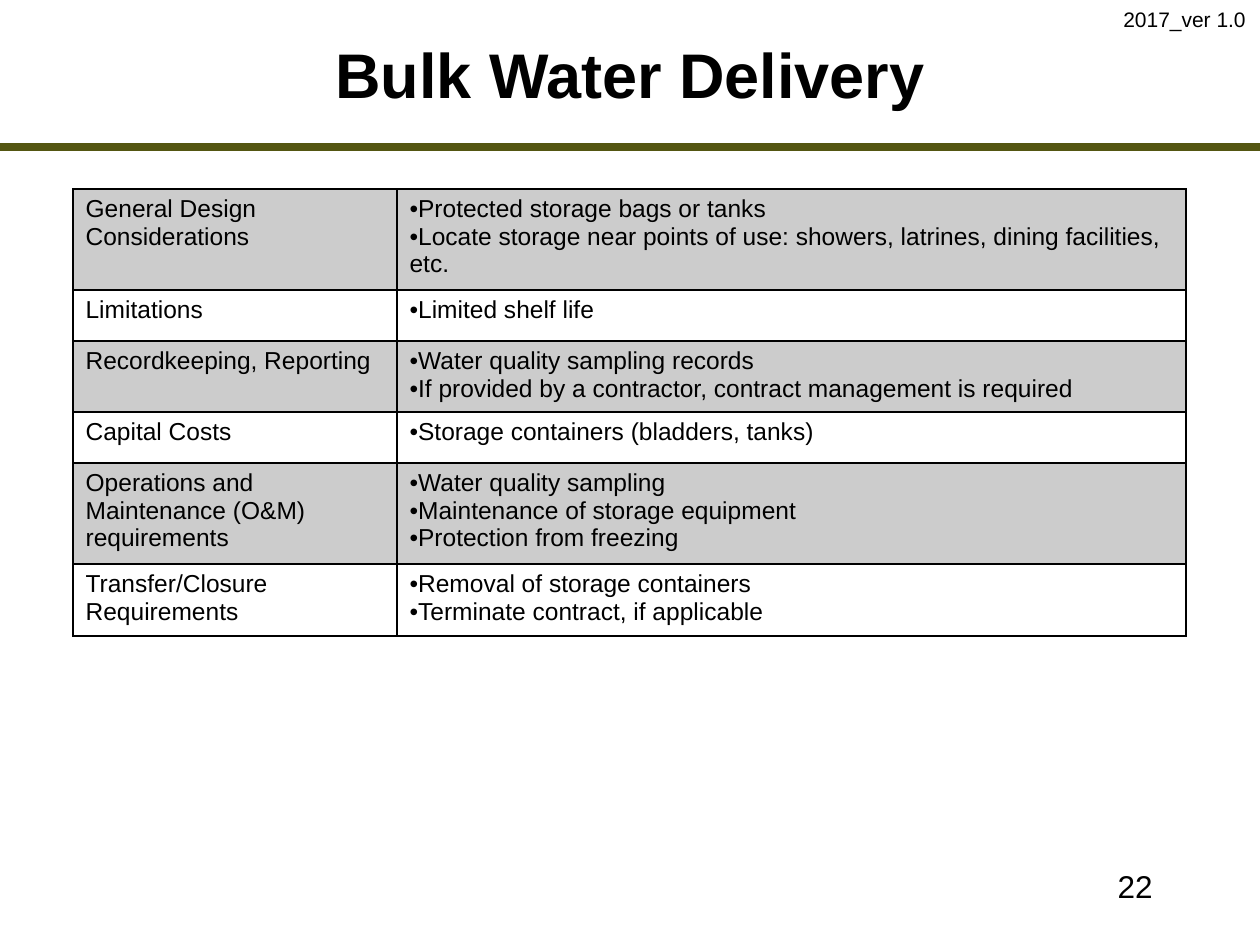
from lxml import etree
from pptx import Presentation
from pptx import util as u
from pptx.dml.color import RGBColor
from pptx.enum import shapes, text
from pptx.oxml.ns import qn

SCALE = 914400 / 126
BLACK, OLIVE = "000000", "545612"
FACE = "Arial"
ALIGN = text.PP_ALIGN

ROWS = [
    (101, "General Design Considerations",
     ["Protected storage bags or tanks",
      "Locate storage near points of use: showers, latrines, "
      "dining facilities, etc."]),
    (51, "Limitations", ["Limited shelf life"]),
    (71, "Recordkeeping, Reporting",
     ["Water quality sampling records",
      "If provided by a contractor, contract management is required"]),
    (51, "Capital Costs", ["Storage containers (bladders, tanks)"]),
    (101, "Operations and Maintenance (O&M) requirements",
     ["Water quality sampling", "Maintenance of storage equipment",
      "Protection from freezing"]),
    (72, "Transfer/Closure Requirements",
     ["Removal of storage containers", "Terminate contract, if applicable"]),
]


def px(n):
    return u.Emu(round(n * SCALE))


def color(code):
    return RGBColor.from_string(code)


def write(frame, lines, size=14, bold=False, align=ALIGN.LEFT, bullet=False):
    """Fill a text frame, one paragraph for each line."""
    for i, line in enumerate(lines):
        para = frame.add_paragraph() if i else frame.paragraphs[0]
        para.text = line
        para.alignment = align
        if bullet:
            props = para._p.get_or_add_pPr()
            props.set("marL", "0")
            props.set("indent", "0")
            etree.SubElement(props, qn("a:buFont"), typeface=FACE)
            etree.SubElement(props, qn("a:buChar"), char="•")
        font = para.font
        font.name, font.size, font.bold = FACE, u.Pt(size), bold
        font.color.rgb = color(BLACK)


def border(cell):
    props = cell._tc.get_or_add_tcPr()
    for side in ("lnL", "lnR", "lnT", "lnB"):
        line = etree.SubElement(props, qn("a:" + side), w=str(u.Pt(1)))
        fill = etree.SubElement(line, qn("a:solidFill"))
        etree.SubElement(fill, qn("a:srgbClr"), val=BLACK)


def shade(cell, dark):
    """Tint a dark cell with black at 20 percent; leave others clear."""
    if not dark:
        cell.fill.background()
        return
    cell.fill.solid()
    cell.fill.fore_color.rgb = color(BLACK)
    tone = cell._tc.tcPr.find(qn("a:solidFill")).find(qn("a:srgbClr"))
    etree.SubElement(tone, qn("a:alpha"), val="20000")


def header(slide, x, y, w, h):
    # Title
    title = slide.shapes.title
    title.left, title.top = px(x + 147), px(y + 21)
    title.width, title.height = px(w - 294), px(105)
    frame = title.text_frame
    frame.vertical_anchor = text.MSO_ANCHOR.MIDDLE
    write(frame, ["Bulk Water Delivery"], size=36, bold=True,
          align=ALIGN.CENTER)
    # Rule under the title
    rule = slide.shapes.add_connector(
        shapes.MSO_CONNECTOR.STRAIGHT, px(x), px(y + h), px(x + w), px(y + h))
    rule.line.color.rgb = color(OLIVE)
    rule.line.width = u.Pt(4.5)
    etree.SubElement(rule._element.spPr, qn("a:effectLst"))


def grid(slide, x, y, w, h):
    table = slide.shapes.add_table(
        len(ROWS), 2, px(x), px(y), px(w), px(h)).table
    table.first_row = table.horz_banding = False
    label = 324
    table.columns[0].width = px(label)
    table.columns[1].width = px(w - label)
    for i, (high, name, points) in enumerate(ROWS):
        table.rows[i].height = px(high)
        for j, lines in enumerate(([name], points)):
            cell = table.cell(i, j)
            write(cell.text_frame, lines, bullet=j == 1)
            border(cell)
            shade(cell, i % 2 == 0)


def note(slide, x, y, w, h, line, wrap=True, **style):
    frame = slide.shapes.add_textbox(px(x), px(y), px(w), px(h)).text_frame
    frame.word_wrap = wrap
    write(frame, [line], **style)
    return frame


def main():
    deck = Presentation()
    deck.slide_width, deck.slide_height = px(1260), px(945)
    slide = deck.slides.add_slide(deck.slide_layouts[5])
    header(slide, 0, 0, 1260, 147)
    grid(slide, 73, 189, 1113, sum(row[0] for row in ROWS))
    # Page number and version
    note(slide, 903, 861, 262, 63, "22", size=18, align=ALIGN.RIGHT)
    mark = note(slide, 1111, 0, 149, 38, "2017_ver 1.0", wrap=False, size=12)
    mark.auto_size = text.MSO_AUTO_SIZE.SHAPE_TO_FIT_TEXT
    deck.save("out.pptx")


if __name__ == "__main__":
    main()
